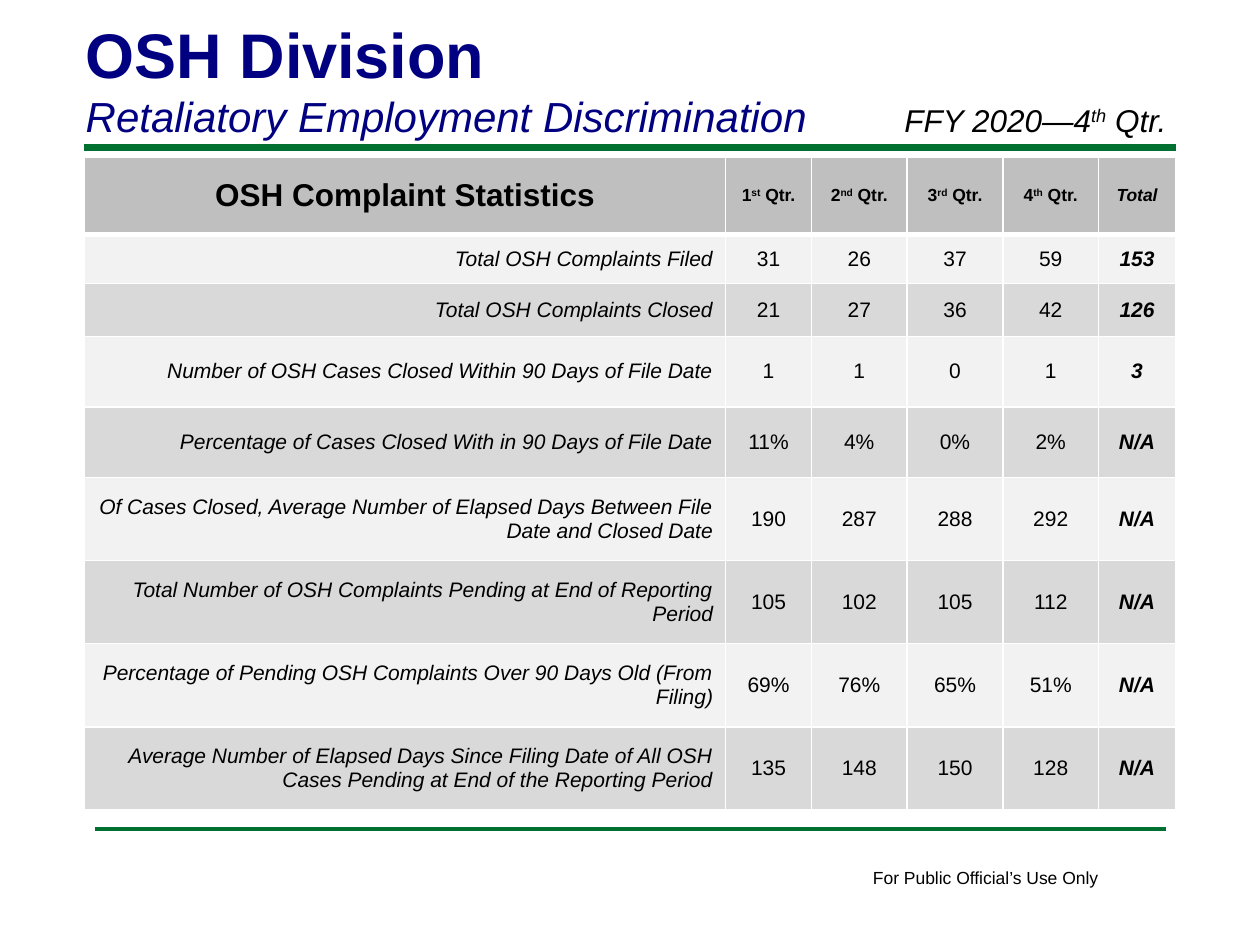
import dataclasses
import typing

import lxml.etree
import pptx
import pptx.dml.color
import pptx.enum.shapes
import pptx.enum.text
import pptx.oxml.ns
import pptx.util

Inches = pptx.util.Inches
Align = pptx.enum.text.PP_ALIGN
Anchor = pptx.enum.text.MSO_ANCHOR
qn = pptx.oxml.ns.qn

NAVY, GREEN, BLACK, WHITE = "000080", "007030", "000000", "FFFFFF"
HEADER_FILL, LIGHT_FILL, DARK_FILL = "BFBFBF", "F2F2F2", "D9D9D9"


@dataclasses.dataclass
class TextStyle:
    size: float
    color: str = BLACK
    bold: bool = False
    italic: bool = False
    align: Align = Align.LEFT


@dataclasses.dataclass
class Rule:
    left: float
    right: float
    top: float
    weight: float


@dataclasses.dataclass
class StatisticRow:
    label: str
    values: list[str]
    height: float


RULES = [Rule(0.67, 9.33, 1.17, 4), Rule(0.75, 9.25, 6.58, 2)]

COLUMN_WIDTHS = [5.09, 0.68, 0.76, 0.76, 0.76, 0.61]
HEADER_HEIGHT = 0.61
ORDINALS = ["st", "nd", "rd", "th"]
STATISTICS = [
    StatisticRow("Total OSH Complaints Filed", ["31", "26", "37", "59", "153"], 0.39),
    StatisticRow("Total OSH Complaints Closed", ["21", "27", "36", "42", "126"], 0.42),
    StatisticRow("Number of OSH Cases Closed Within 90 Days of File Date",
                 ["1", "1", "0", "1", "3"], 0.56),
    StatisticRow("Percentage of Cases Closed With in 90 Days of File Date",
                 ["11%", "4%", "0%", "2%", "N/A"], 0.56),
    StatisticRow("Of Cases Closed, Average Number of Elapsed Days Between File Date and Closed Date",
                 ["190", "287", "288", "292", "N/A"], 0.66),
    StatisticRow("Total Number of OSH Complaints Pending at End of Reporting Period",
                 ["105", "102", "105", "112", "N/A"], 0.66),
    StatisticRow("Percentage of Pending OSH Complaints Over 90 Days Old (From Filing)",
                 ["69%", "76%", "65%", "51%", "N/A"], 0.66),
    StatisticRow("Average Number of Elapsed Days Since Filing Date of All OSH Cases Pending "
                 "at End of the Reporting Period",
                 ["135", "148", "150", "128", "N/A"], 0.66),
]


def rgb(color: str) -> pptx.dml.color.RGBColor:
    return pptx.dml.color.RGBColor.from_string(color)


def write(para: typing.Any, text: str, style: TextStyle) -> None:
    """Fill a paragraph; text between ^ marks is raised."""
    para.alignment = style.align
    font = para.font
    font.name, font.size = "Arial", pptx.util.Pt(style.size)
    font.bold, font.italic = style.bold, style.italic
    font.color.rgb = rgb(style.color)
    for index, part in enumerate(text.split("^")):
        span = para.add_run()
        span.text = part
        if index % 2:
            span.font._element.set("baseline", "30000")


def add_rule(page: typing.Any, rule: Rule) -> None:
    line = page.shapes.add_connector(
        pptx.enum.shapes.MSO_CONNECTOR.STRAIGHT,
        Inches(rule.left), Inches(rule.top), Inches(rule.right), Inches(rule.top))
    line.line.color.rgb = rgb(GREEN)
    line.line.width = pptx.util.Pt(rule.weight)
    lxml.etree.SubElement(line._element.spPr, qn("a:effectLst"))


def add_label(page: typing.Any, left: float, top: float, width: float, height: float,
              text: str, style: TextStyle, wrap: bool) -> None:
    box = page.shapes.add_textbox(Inches(left), Inches(top), Inches(width), Inches(height))
    box.text_frame.word_wrap = wrap
    write(box.text_frame.paragraphs[0], text, style)


def set_borders(cell: typing.Any, top: float, bottom: float) -> None:
    properties = cell._tc.get_or_add_tcPr()
    for side, weight in {"L": 1, "R": 1, "T": top, "B": bottom}.items():
        border = lxml.etree.SubElement(properties, qn(f"a:ln{side}"), w=str(pptx.util.Pt(weight)))
        fill = lxml.etree.SubElement(border, qn("a:solidFill"))
        lxml.etree.SubElement(fill, qn("a:srgbClr"), val=WHITE)


def fill_row(table: typing.Any, row: int, texts: list[str], styles: list[TextStyle],
             color: str) -> None:
    for column, (text, style) in enumerate(zip(texts, styles)):
        cell = table.cell(row, column)
        set_borders(cell, top=3 if row == 1 else 1, bottom=3 if row == 0 else 1)
        cell.fill.solid()
        cell.fill.fore_color.rgb = rgb(color)
        cell.vertical_anchor = Anchor.MIDDLE
        write(cell.text_frame.paragraphs[0], text, style)


def add_statistics(page: typing.Any) -> None:
    heights = [HEADER_HEIGHT] + [row.height for row in STATISTICS]
    frame = page.shapes.add_table(
        len(heights), len(COLUMN_WIDTHS), Inches(0.67), Inches(1.25),
        Inches(sum(COLUMN_WIDTHS)), Inches(sum(heights)))
    table = frame.table
    for column, width in zip(table.columns, COLUMN_WIDTHS):
        column.width = Inches(width)
    for row, height in zip(table.rows, heights):
        row.height = Inches(height)

    # Header row
    quarters = [f"{number}^{suffix}^ Qtr." for number, suffix in enumerate(ORDINALS, 1)]
    quarter_style = TextStyle(10, bold=True, align=Align.CENTER)
    fill_row(table, 0, ["OSH Complaint Statistics", *quarters, "Total"],
             [TextStyle(18, bold=True, align=Align.CENTER), *[quarter_style] * 4,
              TextStyle(10, bold=True, italic=True, align=Align.CENTER)], HEADER_FILL)

    # Banded statistics rows
    styles = [TextStyle(12, italic=True, align=Align.RIGHT),
              *[TextStyle(12, align=Align.CENTER)] * 4,
              TextStyle(12, bold=True, italic=True, align=Align.CENTER)]
    for index, row in enumerate(STATISTICS, 1):
        fill_row(table, index, [row.label, *row.values], styles,
                 LIGHT_FILL if index % 2 else DARK_FILL)


def add_title(page: typing.Any) -> None:
    title = page.shapes.title
    title.left, title.top = Inches(0.58), Inches(0.06)
    title.width, title.height = Inches(8.25), Inches(1.11)
    frame = title.text_frame
    frame.auto_size = pptx.enum.text.MSO_AUTO_SIZE.NONE
    frame.word_wrap = True
    frame.vertical_anchor = Anchor.BOTTOM
    write(frame.paragraphs[0], "OSH Division", TextStyle(36, NAVY, bold=True))
    write(frame.add_paragraph(), "Retaliatory Employment Discrimination",
          TextStyle(24, NAVY, italic=True))


def main() -> None:
    deck = pptx.Presentation()
    deck.slide_width, deck.slide_height = Inches(10), Inches(7.5)
    page = deck.slides.add_slide(deck.slide_layouts.get_by_name("Title Only"))

    # Green rules and footer
    for rule in RULES:
        add_rule(page, rule)
    add_label(page, 6.83, 6.83, 2.01, 0.27, "For Public Official’s Use Only",
              TextStyle(10), wrap=False)

    # Table, title and reporting period
    add_statistics(page)
    add_title(page)
    add_label(page, 7.08, 0.75, 2.5, 0.4, "FFY 2020—4^th^ Qtr.",
              TextStyle(18, italic=True), wrap=True)
    deck.save("out.pptx")


if __name__ == "__main__":
    main()
